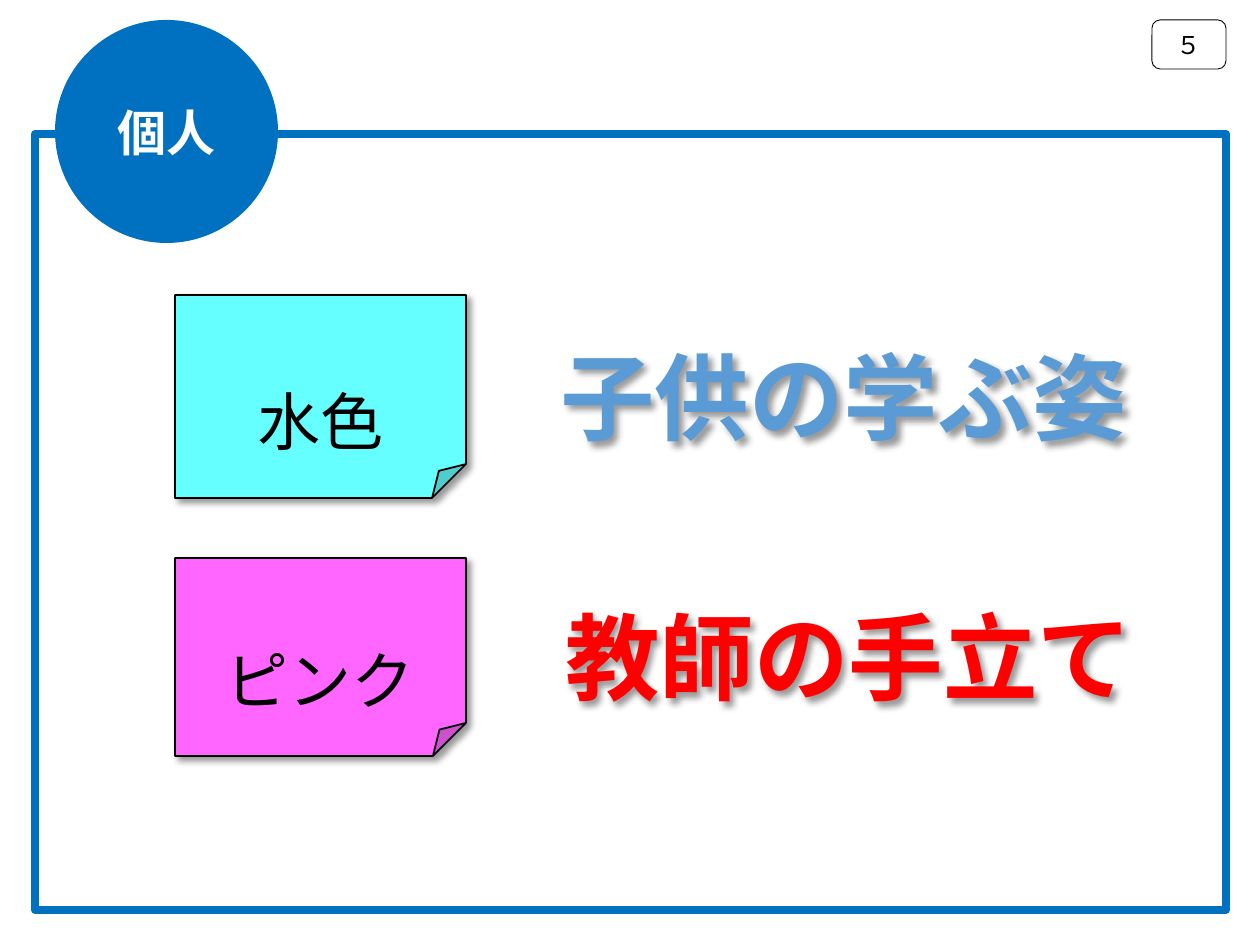
from lxml import etree
from pptx import Presentation
from pptx.dml.color import RGBColor
from pptx.enum.shapes import MSO_SHAPE
from pptx.enum.text import MSO_ANCHOR, PP_ALIGN
from pptx.oxml import parse_xml
from pptx.oxml.ns import nsdecls, qn
from pptx.util import Emu, Pt

NOTE, PILL = MSO_SHAPE.FOLDED_CORNER, MSO_SHAPE.ROUNDED_RECTANGLE
FRAME, DISC = MSO_SHAPE.RECTANGLE, MSO_SHAPE.OVAL
MID, LOW, TOP = MSO_ANCHOR.MIDDLE, MSO_ANCHOR.BOTTOM, MSO_ANCHOR.TOP
LEFT, CENTER = PP_ALIGN.LEFT, PP_ALIGN.CENTER
SCALE = 914400 / 126
GOTHIC, LATIN = "Noto Sans CJK JP", "Calibri"
COLORS = {
    "blue": "0070C0", "sky": "5B9BD5", "red": "FF0000", "aqua": "66FFFF",
    "pink": "FF66FF", "black": "000000", "white": "FFFFFF",
}


def px(n):
    """Turn pixels into EMU."""
    return Emu(round(n * SCALE))


def color(name):
    """Look up a colour by name."""
    return RGBColor.from_string(COLORS[name])


def write(shape, text, size, tint, font=GOTHIC, bold=False, align=CENTER,
          anchor=TOP, wrap=True):
    """Put one formatted paragraph into a shape."""
    frame = shape.text_frame
    frame.word_wrap, frame.vertical_anchor = wrap, anchor
    para = frame.paragraphs[0]
    para.text, para.alignment = text, align
    para.font.size, para.font.bold, para.font.name = Pt(size), bold, font
    para.font.color.rgb = color(tint)
    props = para._p.pPr.find(qn("a:defRPr"))
    etree.SubElement(props, qn("a:ea")).set("typeface", GOTHIC)


def shade(shape):
    """Cast a soft shadow to the lower right."""
    shape._element.spPr.append(parse_xml(
        f'<a:effectLst {nsdecls("a")}><a:outerShdw blurRad="50800" '
        'dist="38100" dir="2700000" algn="tl" rotWithShape="0">'
        f'<a:srgbClr val="{COLORS["black"]}"><a:alpha val="40000"/>'
        '</a:srgbClr></a:outerShdw></a:effectLst>'))


def draw(slide, kind, box, fill=None, line=None, width=1, shadow=False):
    """Add a preset shape with its fill and outline."""
    shape = slide.shapes.add_shape(kind, *map(px, box))
    if shadow:
        shade(shape)
    else:
        shape.shadow.inherit = False
    if fill:
        shape.fill.solid()
        shape.fill.fore_color.rgb = color(fill)
    else:
        shape.fill.background()
    if line:
        shape.line.color.rgb = color(line)
        shape.line.width = Pt(width)
    else:
        shape.line.fill.background()
    return shape


def note(slide, top, height, text, fill):
    """Add a sticky note with its colour name."""
    shape = draw(slide, NOTE, (175, top, 291, height), fill, "black",
                 shadow=True)
    write(shape, text, 36, "black", anchor=LOW)


def label(slide, box, text, tint, align):
    """Add a large shadowed caption."""
    shape = slide.shapes.add_textbox(*map(px, box))
    write(shape, text, 54, tint, LATIN, True, align)
    shade(shape)


def head(slide, box, text):
    """Move the title in front of the disc and fill it."""
    title = slide.shapes.title
    title.left, title.top, title.width, title.height = map(px, box)
    write(title, text, 28, "white", bold=True, anchor=MID, wrap=False)
    slide.shapes._spTree.append(title._element)


def main():
    """Build the slide and save it."""
    deck = Presentation()
    deck.slide_width, deck.slide_height = px(1260), px(945)
    slide = deck.slides.add_slide(deck.slide_layouts[5])
    note(slide, 558, 198, "ピンク", "pink")
    note(slide, 295, 203, "水色", "aqua")
    label(slide, (548, 333, 624, 127), "子供の学ぶ姿", "sky", LEFT)
    label(slide, (548, 593, 601, 127), "教師の手立て", "red", CENTER)
    page = draw(slide, PILL, (1152, 20, 74, 49), "white", "black", 0.5)
    write(page, "５", 14, "black", anchor=MID)
    draw(slide, FRAME, (35, 134, 1191, 776), line="blue", width=4.5)
    draw(slide, DISC, (55, 20, 223, 223), "blue")
    head(slide, (104, 96, 125, 72), "個人")
    deck.save("out.pptx")


if __name__ == "__main__":
    main()
